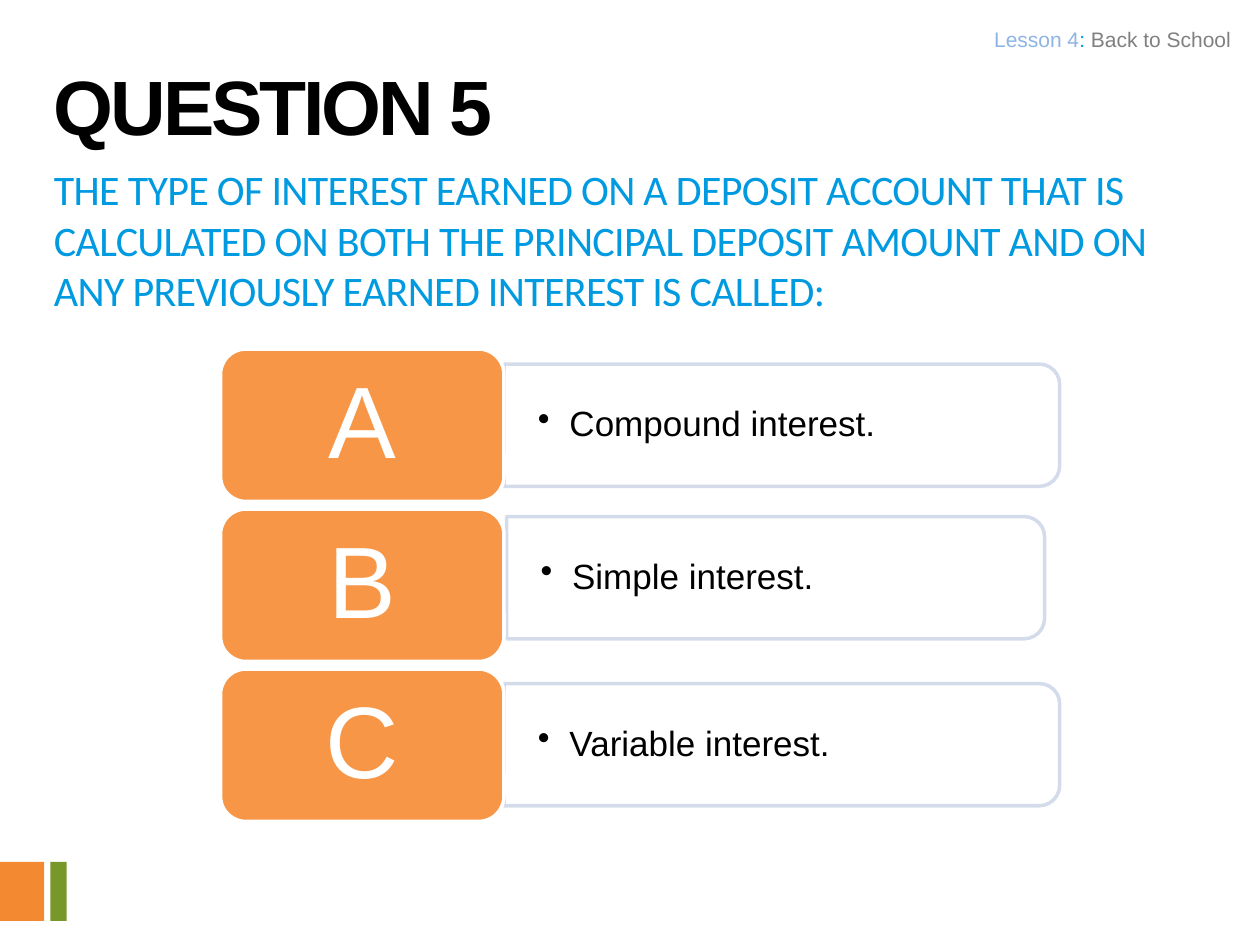
from lxml import etree
from pptx import Presentation
from pptx.dml.color import RGBColor as RGB
from pptx.enum.shapes import MSO_SHAPE as Shape
from pptx.enum.text import MSO_ANCHOR as Anchor, PP_ALIGN as Align
from pptx.oxml.ns import qn
from pptx.util import Inches, Pt

HUES = {
    "white": "FFFFFF", "black": "000000", "gray": "808080",
    "blue": "009AE1", "sky": "8EB4E3", "pale": "D0D8E8",
    "card": "F79646", "orange": "F38A31", "green": "77972B",
}


def hue(name):
    return RGB.from_string(HUES[name])


def fade(fill, share):
    """Set the opacity of a solid fill, in percent."""
    tag = fill._xPr.find(qn("a:solidFill"))[0]
    etree.SubElement(tag, qn("a:alpha"), val=str(share * 1000))


def add_block(slide, kind, box, fill, line=None, alpha=None):
    item = slide.shapes.add_shape(kind, *map(Inches, box))
    item.shadow.inherit = False
    item.fill.solid()
    item.fill.fore_color.rgb = hue(fill)
    if line:
        item.line.color.rgb = hue(line)
        item.line.width = Pt(2)
    else:
        item.line.fill.background()
    if alpha:
        fade(item.fill, alpha)
        fade(item.line.fill, alpha)
    return item


def add_box(slide, box):
    return slide.shapes.add_textbox(*map(Inches, box))


def put_text(item, runs, size, font="Arial", bold=False, track=0, space=None,
             align=Align.LEFT, anchor=Anchor.TOP, pad=(0.1, 0.05), dot=False):
    """Write one paragraph of (text, color) runs into a shape."""
    frame = item.text_frame
    frame.word_wrap = True
    frame.vertical_anchor = anchor
    frame.margin_left = frame.margin_right = Inches(pad[0])
    frame.margin_top = frame.margin_bottom = Inches(pad[1])
    para = frame.paragraphs[0]
    para.alignment = align
    if space:
        para.line_spacing = space
    if dot:
        props = para._p.get_or_add_pPr()
        props.set("marL", str(Inches(0.25)))
        props.set("indent", str(-Inches(0.25)))
        etree.SubElement(props, qn("a:buChar"), char="•")
    for text, color in runs:
        run = para.add_run()
        run.text = text
        run.font.size = Pt(size)
        run.font.name = font
        run.font.bold = bold
        run.font.color.rgb = hue(color)
        if track:
            run._r.get_or_add_rPr().set("spc", str(round(track * 100)))


def add_choice(slide, top, letter, answer, left, mid, span):
    """Answer bar with its text, then the letter card over its left end."""
    thick, high = 0.97, 0.87
    bar = add_block(slide, Shape.ROUND_2_SAME_RECTANGLE,
                    (left + (span - thick) / 2, mid - span / 2, thick, span),
                    "white", "pale", alpha=90)
    bar.rotation = 90
    put_text(add_box(slide, (left, mid - high / 2, span - 0.05, high)),
             [(answer, "black")], 20, space=0.9, anchor=Anchor.MIDDLE,
             pad=(0.27, 0.14), dot=True)
    card = add_block(slide, Shape.ROUNDED_RECTANGLE, (1.75, top, 2.25, 1.21),
                     "card", "white")
    put_text(card, [(letter, "white")], 58, space=0.9, align=Align.CENTER,
             anchor=Anchor.MIDDLE, pad=(0.24, 0.12))


def main():
    deck = Presentation()
    deck.slide_width, deck.slide_height = Inches(10), Inches(7.5)
    slide = deck.slides.add_slide(deck.slide_layouts[6])

    # Corner marks
    add_block(slide, Shape.RECTANGLE, (0, 6.84, 0.35, 0.47), "orange")
    add_block(slide, Shape.RECTANGLE, (0.4, 6.84, 0.13, 0.47), "green")

    # Question
    ask = ("THE TYPE OF INTEREST EARNED ON A DEPOSIT ACCOUNT THAT IS "
           "CALCULATED ON BOTH THE PRINCIPAL DEPOSIT AMOUNT AND ON "
           "ANY PREVIOUSLY EARNED INTEREST IS CALLED:")
    put_text(add_box(slide, (0.33, 1.25, 9.08, 1.5)), [(ask, "blue")], 24,
             font="Calibri", track=-0.4)

    # Choices: letter, answer, bar left, bar middle, bar length
    rows = [
        ("A", "Compound interest.", 4, 3.375, 4.41),
        ("B", "Simple interest.", 4.02, 4.585, 4.27),
        ("C", "Variable interest.", 4, 5.91, 4.41),
    ]
    for i, row in enumerate(rows):
        add_choice(slide, 2.77 + 1.27 * i, *row)

    # Lesson line and title
    put_text(add_box(slide, (4, 0.17, 5.85, 0.32)),
             [("Lesson 4", "sky"), (": ", "blue"), ("Back to School", "gray")],
             12, align=Align.RIGHT, pad=(0.08, 0.04))
    put_text(add_box(slide, (0.33, 0.33, 8.66, 0.83)),
             [("QUESTION 5", "black")], 44, bold=True, track=-1.8,
             space=Pt(59))

    deck.save("out.pptx")


if __name__ == "__main__":
    main()
